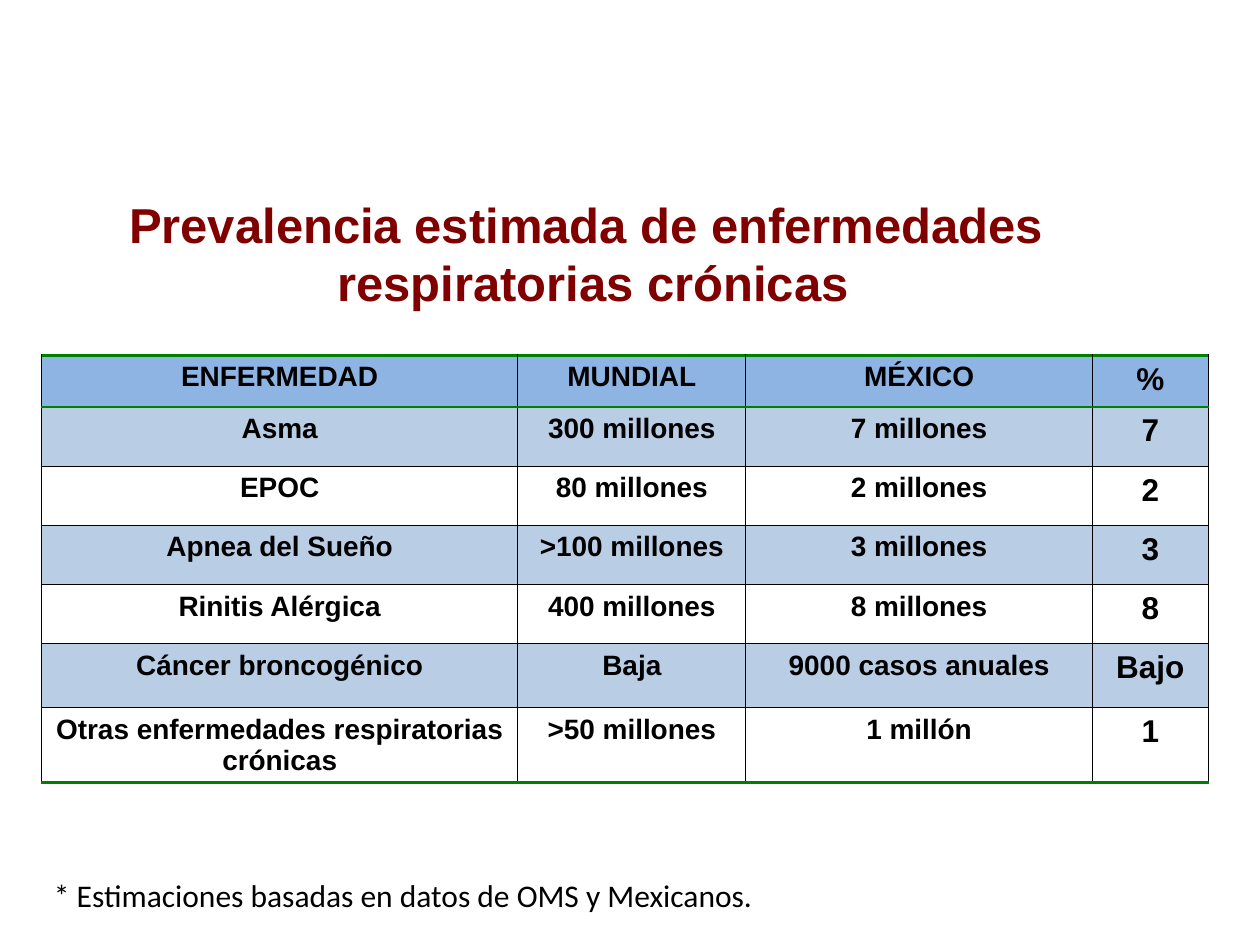
from lxml import etree
from pptx import Presentation
from pptx import util as u
from pptx.dml.color import RGBColor
from pptx.enum import text
from pptx.oxml import ns

MAROON = RGBColor(0x80, 0x00, 0x00)
BLACK = RGBColor(0x00, 0x00, 0x00)
GREEN = RGBColor(0x00, 0x80, 0x00)
HEADER_BLUE = RGBColor(0x8E, 0xB4, 0xE3)
BAND_BLUE = RGBColor(0xB9, 0xCD, 0xE5)

COLUMN_WIDTHS = [3.78, 1.81, 2.75, 0.92]
ROW_HEIGHTS = [0.41, 0.47, 0.47, 0.47, 0.47, 0.51, 0.54]
ROWS = [
    ["ENFERMEDAD", "MUNDIAL", "MÉXICO", "%"],
    ["Asma", "300 millones", "7 millones", "7"],
    ["EPOC", "80 millones", "2 millones", "2"],
    ["Apnea del Sueño", ">100 millones", "3 millones", "3"],
    ["Rinitis Alérgica", "400 millones", "8 millones", "8"],
    ["Cáncer broncogénico", "Baja", "9000 casos anuales", "Bajo"],
    ["Otras enfermedades respiratorias\ncrónicas", ">50 millones", "1 millón", "1"],
]
LAST_ROW = len(ROWS) - 1
LEFT = u.Inches(0.33)


def format_runs(paragraph, font_name, size, color, bold):
    for run in paragraph.runs:
        run.font.name = font_name
        run.font.size = u.Pt(size)
        run.font.color.rgb = color
        run.font.bold = bold


def set_borders(cell, borders):
    """Draw borders given as (side, color, points), in the order L, R, T, B."""
    properties = cell._tc.get_or_add_tcPr()
    for position, (side, color, points) in enumerate(borders):
        line = etree.Element(ns.qn(f"a:ln{side}"), w=str(u.Pt(points)))
        fill = etree.SubElement(line, ns.qn("a:solidFill"))
        etree.SubElement(fill, ns.qn("a:srgbClr"), val=str(color))
        properties.insert(position, line)


presentation = Presentation()
presentation.slide_width = u.Inches(10)
presentation.slide_height = u.Inches(7.5)
slide = presentation.slides.add_slide(presentation.slide_layouts[5])

title = slide.shapes.title
title.left, title.top = u.Inches(0.58), u.Inches(1.44)
title.width, title.height = u.Inches(8.25), u.Inches(0.95)
title_frame = title.text_frame
title_frame.text = "Prevalencia estimada de enfermedades \vrespiratorias crónicas"
title_frame.auto_size = text.MSO_AUTO_SIZE.NONE
title_frame.vertical_anchor = text.MSO_ANCHOR.TOP
title_frame.margin_top = u.Inches(0.1)
title_frame.paragraphs[0].alignment = text.PP_ALIGN.CENTER
format_runs(title_frame.paragraphs[0], "Arial", 28, MAROON, True)

table = slide.shapes.add_table(
    len(ROWS), len(COLUMN_WIDTHS), LEFT, u.Inches(2.82),
    u.Inches(sum(COLUMN_WIDTHS)), u.Inches(sum(ROW_HEIGHTS))).table
for column, width in zip(table.columns, COLUMN_WIDTHS):
    column.width = u.Inches(width)
for row, height in zip(table.rows, ROW_HEIGHTS):
    row.height = u.Inches(height)

for row_index, values in enumerate(ROWS):
    top = {0: (GREEN, 2), 1: (GREEN, 1)}.get(row_index, (BLACK, 0.75))
    bottom = {0: (GREEN, 1), LAST_ROW: (GREEN, 2)}.get(row_index, (BLACK, 0.75))
    for column_index, value in enumerate(values):
        cell = table.cell(row_index, column_index)
        cell.text_frame.text = value
        size = 18 if column_index == len(values) - 1 else 16
        for paragraph in cell.text_frame.paragraphs:
            paragraph.alignment = text.PP_ALIGN.CENTER
            format_runs(paragraph, "Arial", size, BLACK, True)
        if row_index == 0 or row_index % 2:
            cell.fill.solid()
            cell.fill.fore_color.rgb = BAND_BLUE if row_index else HEADER_BLUE
        else:
            cell.fill.background()
        set_borders(cell, [("L", BLACK, 0.75), ("R", BLACK, 0.75),
                           ("T", *top), ("B", *bottom)])

footnote = slide.shapes.add_textbox(LEFT, u.Inches(6.9), u.Inches(5.81), u.Inches(0.4))
footnote_frame = footnote.text_frame
footnote_frame.text = "* Estimaciones basadas en datos de OMS y Mexicanos."
footnote_frame.word_wrap = False
footnote_frame.auto_size = text.MSO_AUTO_SIZE.SHAPE_TO_FIT_TEXT
format_runs(footnote_frame.paragraphs[0], "Calibri", 18, BLACK, False)

presentation.save("out.pptx")
